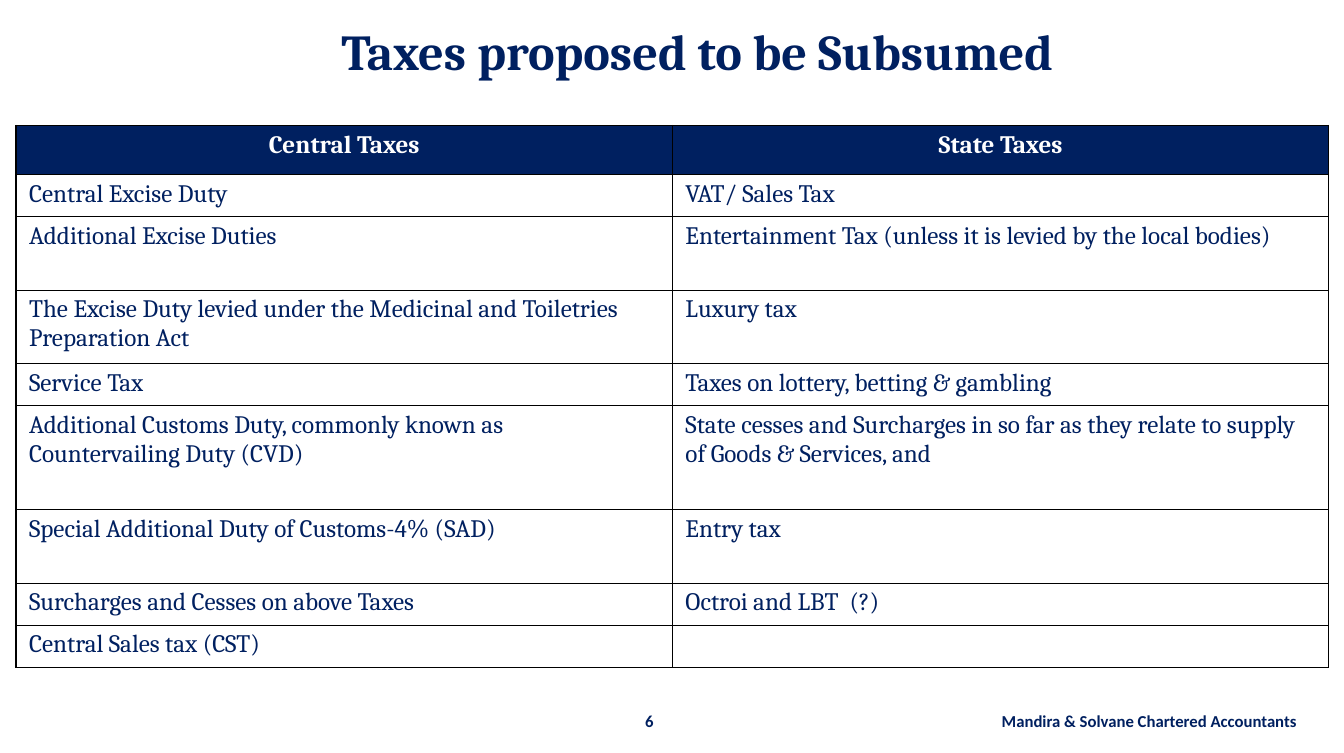
from dataclasses import dataclass

from lxml import etree
from pptx import Presentation
from pptx import util as u
from pptx.dml import color
from pptx.enum import text
from pptx.oxml import ns


@dataclass(frozen=True)
class Theme:
    """Colours, fonts and type sizes of the slide."""
    navy: str = "002060"
    white: str = "FFFFFF"
    border: str = "000000"
    serif: str = "Cambria"
    sans: str = "Calibri"
    title_size: int = 36
    table_size: int = 18
    footer_size: int = 12


THEME = Theme()
ALIGN = text.PP_ALIGN
HEADERS = ("Central Taxes", "State Taxes")
TAXES = (
    (0.42, "Central Excise Duty", "VAT/ Sales Tax"),
    (0.73, "Additional Excise Duties",
     "Entertainment Tax (unless it is levied by the local bodies)"),
    (0.73, "The Excise Duty levied under the Medicinal and Toiletries Preparation Act",
     "Luxury tax"),
    (0.42, "Service Tax", "Taxes on lottery, betting & gambling"),
    (1.04, "Additional Customs Duty, commonly known as Countervailing Duty (CVD)",
     "State cesses and Surcharges in so far as they relate to supply of Goods & Services, and"),
    (0.73, "Special Additional Duty of Customs-4% (SAD)", "Entry tax"),
    (0.42, "Surcharges and Cesses on above Taxes", "Octroi and LBT  (?)"),
    (0.42, "Central Sales tax (CST)", ""),
)


def apply_format(target, values):
    """Set every attribute named in values on the target."""
    for name, value in values.items():
        setattr(target, name, value)


def write_text(frame, words, alignment, font_name, size, rgb, bold):
    """Write one formatted run into the first paragraph of a frame."""
    paragraph = frame.paragraphs[0]
    paragraph.alignment = alignment
    run = paragraph.add_run()
    run.text = words
    apply_format(run.font, {"name": font_name, "size": u.Pt(size), "bold": bold})
    run.font.color.rgb = color.RGBColor.from_string(rgb)


def add_label(slide, box, words, alignment, font_name, size, left_inset=0.1):
    """Add a bold navy text box."""
    shape = slide.shapes.add_textbox(*map(u.Inches, box))
    apply_format(shape.text_frame,
                 {"word_wrap": True, "margin_left": u.Inches(left_inset)})
    write_text(shape.text_frame, words, alignment, font_name, size, THEME.navy, True)


def add_borders(cell):
    """Draw a one-point line on all four sides of a cell."""
    properties = cell._tc.get_or_add_tcPr()
    for index, side in enumerate(("lnL", "lnR", "lnT", "lnB")):
        line = etree.Element(ns.qn(f"a:{side}"), w=str(u.Pt(1)))
        fill = etree.SubElement(line, ns.qn("a:solidFill"))
        etree.SubElement(fill, ns.qn("a:srgbClr"), val=THEME.border)
        properties.insert(index, line)


def fill_cell(cell, words, is_header):
    """Format one header or body cell and write its words."""
    apply_format(cell, {"margin_left": u.Inches(0.13), "margin_right": u.Inches(0.13),
                        "margin_top": u.Inches(0.05), "margin_bottom": u.Inches(0.05)})
    if is_header:
        cell.fill.solid()
        cell.fill.fore_color.rgb = color.RGBColor.from_string(THEME.navy)
    else:
        cell.fill.background()
    add_borders(cell)
    if words:
        write_text(cell.text_frame, words, ALIGN.CENTER if is_header else ALIGN.LEFT,
                   THEME.serif, THEME.table_size,
                   THEME.white if is_header else THEME.navy, is_header)


def add_tax_table(slide):
    """Add the two-column table of central and state taxes."""
    rows = ((0.49, *HEADERS), *TAXES)
    height = sum(row[0] for row in rows)
    table = slide.shapes.add_table(
        len(rows), len(HEADERS), u.Inches(0.16), u.Inches(1.25),
        u.Inches(13.08), u.Inches(height)).table
    apply_format(table, {"first_row": False, "horz_banding": False})
    for row_index, (row_height, *entries) in enumerate(rows):
        table.rows[row_index].height = u.Inches(row_height)
        for column_index, words in enumerate(entries):
            fill_cell(table.cell(row_index, column_index), words, row_index == 0)


def main():
    """Build the slide and save it."""
    presentation = Presentation()
    apply_format(presentation, {"slide_width": u.Inches(13.39),
                                "slide_height": u.Inches(7.5)})
    slide = presentation.slides.add_slide(presentation.slide_layouts[6])
    add_label(slide, (0, 0.15, 13.39, 0.71), "Taxes proposed to be Subsumed",
              ALIGN.CENTER, THEME.serif, THEME.title_size, left_inset=0.6)
    add_tax_table(slide)
    add_label(slide, (5.97, 7.03, 1, 0.3), "6",
              ALIGN.CENTER, THEME.sans, THEME.footer_size)
    add_label(slide, (8.02, 7.03, 5, 0.3), "Mandira & Solvane Chartered Accountants",
              ALIGN.RIGHT, THEME.sans, THEME.footer_size)
    presentation.save("out.pptx")


if __name__ == "__main__":
    main()
